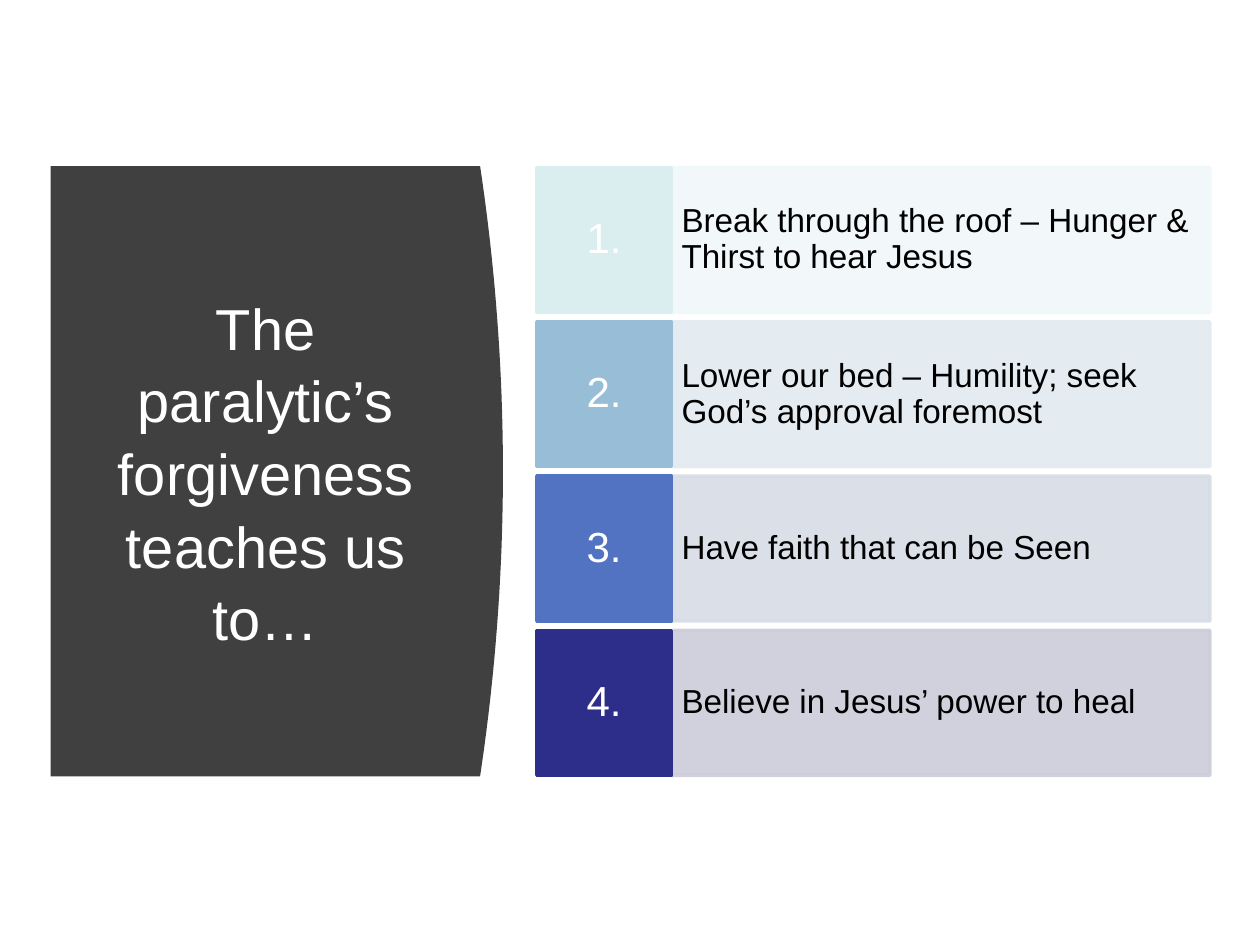
"""Build the slide on what the paralytic's forgiveness teaches."""
from lxml.etree import SubElement
from pptx import Presentation
from pptx.dml.color import RGBColor
from pptx.enum.shapes import MSO_SHAPE
from pptx.enum.text import MSO_ANCHOR, PP_ALIGN
from pptx.oxml.ns import qn
from pptx.util import Cm, Pt

LESSONS = [
    ("Break through the roof – Hunger & Thirst to hear Jesus", "DAEDEF", "F1F8F9"),
    ("Lower our bed – Humility; seek God’s approval foremost", "98BDD6", "E3EBF0"),
    ("Have faith that can be Seen", "5273C1", "D7DCE6"),
    ("Believe in Jesus’ power to heal", "2D2D8A", "CDCDDA"),
]


def color(value):
    """Turn a hex string into a colour."""
    return RGBColor.from_string(value)


def write(shape, text, size=19, ink="000000", align=PP_ALIGN.LEFT, spacing=0.9,
          inset_x=0.25, inset_y=0.13):
    """Write one vertically centred paragraph into a shape."""
    frame = shape.text_frame
    frame.word_wrap = True
    frame.vertical_anchor = MSO_ANCHOR.MIDDLE
    frame.margin_left = frame.margin_right = Cm(inset_x)
    frame.margin_top = frame.margin_bottom = Cm(inset_y)
    paragraph = frame.paragraphs[0]
    paragraph.alignment = align
    paragraph.line_spacing = spacing
    span = paragraph.add_run()
    span.text = text
    span.font.name = "Arial"
    span.font.size = Pt(size)
    span.font.color.rgb = color(ink)


def add_block(page, left, top, width, height, fill, opacity=100):
    """Add a rectangle whose outline matches its fill."""
    block = page.shapes.add_shape(
        MSO_SHAPE.RECTANGLE, Cm(left), Cm(top), Cm(width), Cm(height))
    block.shadow.inherit = False
    block.fill.solid()
    block.fill.fore_color.rgb = color(fill)
    block.line.color.rgb = color(fill)
    block.line.width = Pt(2)
    if opacity < 100:
        for tint in block._element.spPr.iter(qn("a:srgbClr")):
            SubElement(tint, qn("a:alpha"), val=str(opacity * 1000))
    return block


def add_panel(page, left=1.02, top=3.35, width=9.12, height=12.3, bulge=0.46, steps=40):
    """Add the dark panel with a parabolic right edge."""
    edge = []
    for step in range(steps + 1):
        offset = 2 * step / steps - 1
        edge.append((Cm(left + width - bulge * offset ** 2),
                     Cm(top + height * step / steps)))
    builder = page.shapes.build_freeform(Cm(left), Cm(top))
    builder.add_line_segments(edge + [(Cm(left), Cm(top + height))], close=True)
    panel = builder.convert_to_shape()
    panel.shadow.inherit = False
    panel.fill.solid()
    panel.fill.fore_color.rgb = color("404040")
    panel.line.fill.background()


def add_title(page, text):
    """Add the white title over the panel."""
    box = page.shapes.add_textbox(Cm(1.8), Cm(4.5), Cm(7.11), Cm(9.98))
    write(box, text, size=33, ink="FFFFFF", align=PP_ALIGN.CENTER, spacing=1.05)


def add_lesson(page, number, text, strong, pale):
    """Add one numbered row of the list."""
    top, height = 3.38 + 3.11 * (number - 1), 2.92
    body = add_block(page, 13.54, top, 10.85, height, pale, opacity=90)
    write(body, text, inset_x=0.2, inset_y=0.74)
    badge = add_block(page, 10.82, top, 2.72, height, strong)
    write(badge, f"{number}.", size=24, ink="FFFFFF", align=PP_ALIGN.CENTER,
          inset_x=0.15, inset_y=0.28)


def main():
    """Build and save the deck."""
    deck = Presentation()
    deck.slide_width, deck.slide_height = Cm(25.4), Cm(19.05)
    page = deck.slides.add_slide(deck.slide_layouts[6])
    add_panel(page)
    add_title(page, "The paralytic’s forgiveness teaches us to…")
    for number, lesson in enumerate(LESSONS, start=1):
        add_lesson(page, number, *lesson)
    deck.save("out.pptx")


if __name__ == "__main__":
    main()
